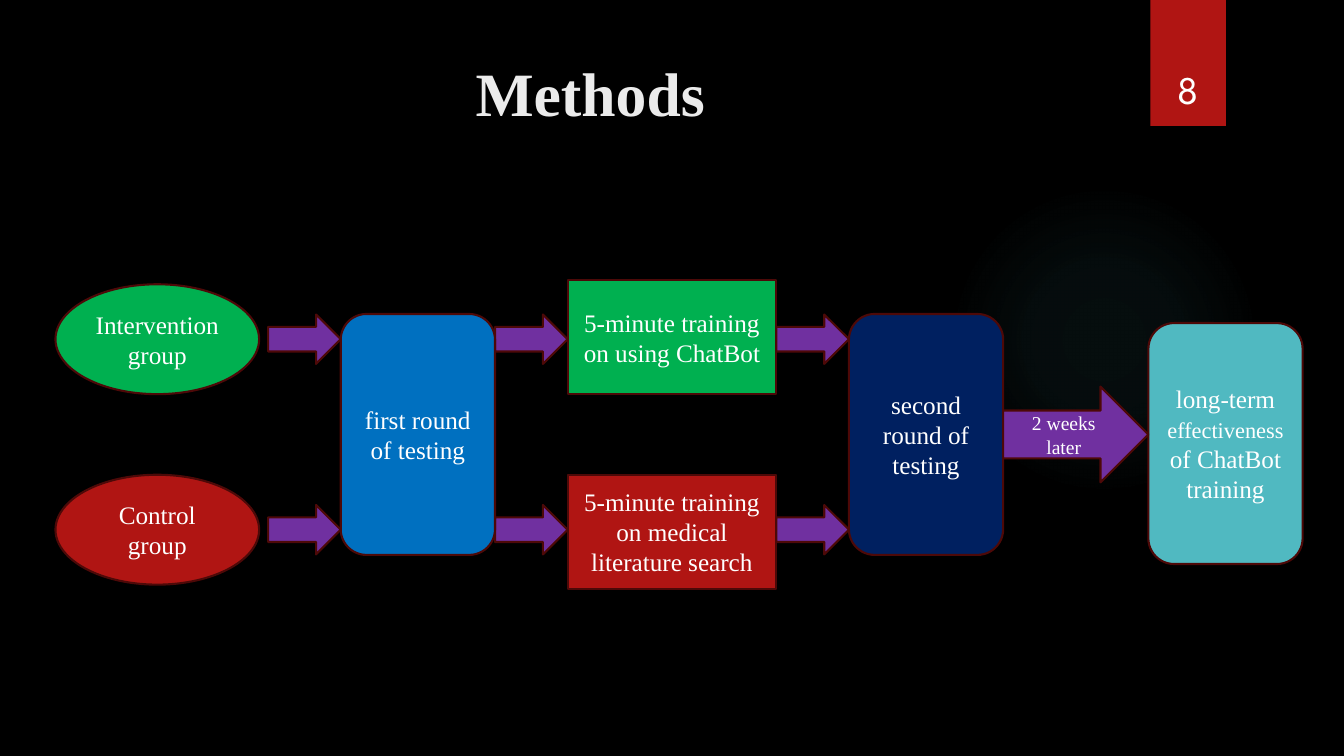
from lxml import etree
from pptx import Presentation
from pptx.dml.color import RGBColor
from pptx.enum.shapes import MSO_SHAPE
from pptx.enum.text import MSO_ANCHOR, PP_ALIGN
from pptx.oxml import parse_xml
from pptx.util import Inches, Pt

OVAL, RECT = MSO_SHAPE.OVAL, MSO_SHAPE.RECTANGLE
ROUNDED, ARROW = MSO_SHAPE.ROUNDED_RECTANGLE, MSO_SHAPE.RIGHT_ARROW
TOP, MIDDLE, BOTTOM = MSO_ANCHOR.TOP, MSO_ANCHOR.MIDDLE, MSO_ANCHOR.BOTTOM
SERIF, NUMBER_FONT = "Times New Roman", "League Spartan"
DRAWING = "http://schemas.openxmlformats.org/drawingml/2006/main"

COLORS = {
    "background": "000000", "title": "EBEBEB", "text": "FFFFFF",
    "outline": "4D0908", "arrow": "7030A0", "intervention": "00B050",
    "control": "B01513", "first": "0070C0", "second": "002060",
    "teal": "50B9C1",
}

ARROW_WIDTH, ARROW_HEIGHT = 0.72, 0.49
ROUND_WIDTH, ROUND_HEIGHT = 1.53, 2.39
GROUP_WIDTH, GROUP_HEIGHT, GROUP_GAP = 2.02, 1.09, 0.09
TRAINING_WIDTH, TRAINING_HEIGHT = 2.07, 1.13


def color(name):
    return RGBColor.from_string(COLORS[name])


def write_text(box, *parts, font=SERIF, size=18, ink="text", bold=False,
               anchor=MIDDLE):
    """Each part is a string, or a (string, size) pair."""
    frame = box.text_frame
    frame.word_wrap = True
    frame.vertical_anchor = anchor
    para = frame.paragraphs[0]
    para.alignment = PP_ALIGN.CENTER
    for part in parts:
        text, points = part if isinstance(part, tuple) else (part, size)
        span = para.add_run()
        span.text = text
        span.font.name = font
        span.font.size = Pt(points)
        span.font.bold = bold
        span.font.color.rgb = color(ink)


def add_text_box(page, left, top, width, height, text, **style):
    box = page.shapes.add_textbox(*map(Inches, (left, top, width, height)))
    write_text(box, text, **style)


def add_block(page, kind, left, center, width, height, fill, outlined=True):
    """Place a shape by its left edge and its vertical center."""
    block = page.shapes.add_shape(
        kind, *map(Inches, (left, center - height / 2, width, height)))
    block.shadow.inherit = False
    block.fill.solid()
    block.fill.fore_color.rgb = color(fill)
    if outlined:
        block.line.color.rgb = color("outline")
        block.line.width = Pt(1.5)
    else:
        block.line.fill.background()
    return block


def add_glow(page, left, center, size):
    glow = add_block(page, OVAL, left, center, size, size, "teal", False)
    stops = "".join(
        f'<a:gs pos="{place * 1000}"><a:srgbClr val="{COLORS["teal"]}">'
        f'<a:alpha val="{alpha * 1000}"/></a:srgbClr></a:gs>'
        for place, alpha in ((0, 7), (36, 6), (69, 0)))
    gradient = parse_xml(
        f'<a:gradFill xmlns:a="{DRAWING}"><a:gsLst>{stops}</a:gsLst>'
        '<a:path path="circle"><a:fillToRect l="50000" t="50000" '
        'r="50000" b="50000"/></a:path></a:gradFill>')
    solid = glow.element.spPr.find(etree.QName(DRAWING, "solidFill"))
    solid.getparent().replace(solid, gradient)


def add_header(page):
    add_glow(page, 9.41, 3.37, 3.08)
    add_block(page, RECT, 11.41, 0.625, 0.75, 1.25, "control", False)
    add_text_box(page, 0.71, 0.5, 10.29, 1.53, "Methods", size=44,
                 ink="title", bold=True, anchor=TOP)
    add_text_box(page, 11.32, 0.32, 0.92, 0.84, "8", size=28,
                 font=NUMBER_FONT, anchor=BOTTOM)


def add_flow(page, left, top, height):
    """Two group rows run through shared test rounds, left to right."""
    middle = top + height / 2
    reach = (height - GROUP_HEIGHT) / 2
    rows = (middle - reach, middle + reach)
    groups = ("Intervention group", "Control group")
    trainings = ("5-minute training on using ChatBot",
                 "5-minute training on medical literature search")
    fills = ("intervention", "control")

    first = left + GROUP_WIDTH + GROUP_GAP + ARROW_WIDTH
    training = first + ROUND_WIDTH + ARROW_WIDTH
    second = training + TRAINING_WIDTH + ARROW_WIDTH
    delay = second + ROUND_WIDTH
    outcome = delay + 2 * ARROW_WIDTH

    for row, group, lesson, fill, shift in zip(
            rows, groups, trainings, fills, (-0.02, 0.02)):
        oval = add_block(page, OVAL, left, row, GROUP_WIDTH, GROUP_HEIGHT, fill)
        write_text(oval, group)
        card = add_block(page, RECT, training, row + shift, TRAINING_WIDTH,
                         TRAINING_HEIGHT, fill)
        write_text(card, lesson)
        for target in (first, training, second):
            add_block(page, ARROW, target - ARROW_WIDTH, row, ARROW_WIDTH,
                      ARROW_HEIGHT, "arrow")

    rounds = (
        (first, middle, "first", ["first round of testing"]),
        (second, middle, "second", ["second round of testing"]),
        (outcome, middle + 0.09, "teal",
         ["long-term ", ("effectiveness", 16), " of ChatBot training"]),
    )
    for place, center, fill, parts in rounds:
        card = add_block(page, ROUNDED, place, center, ROUND_WIDTH,
                         ROUND_HEIGHT, fill)
        write_text(card, *parts)

    wait = add_block(page, ARROW, delay, middle, 2 * ARROW_WIDTH, 0.95, "arrow")
    write_text(wait, "2 weeks later", size=14)


def main():
    deck = Presentation()
    deck.slide_width, deck.slide_height = Inches(13.33), Inches(7.5)
    page = deck.slides.add_slide(deck.slide_layouts[6])
    page.background.fill.solid()
    page.background.fill.fore_color.rgb = color("background")
    add_header(page)
    add_flow(page, left=0.55, top=2.82, height=2.98)
    deck.save("out.pptx")


if __name__ == "__main__":
    main()
